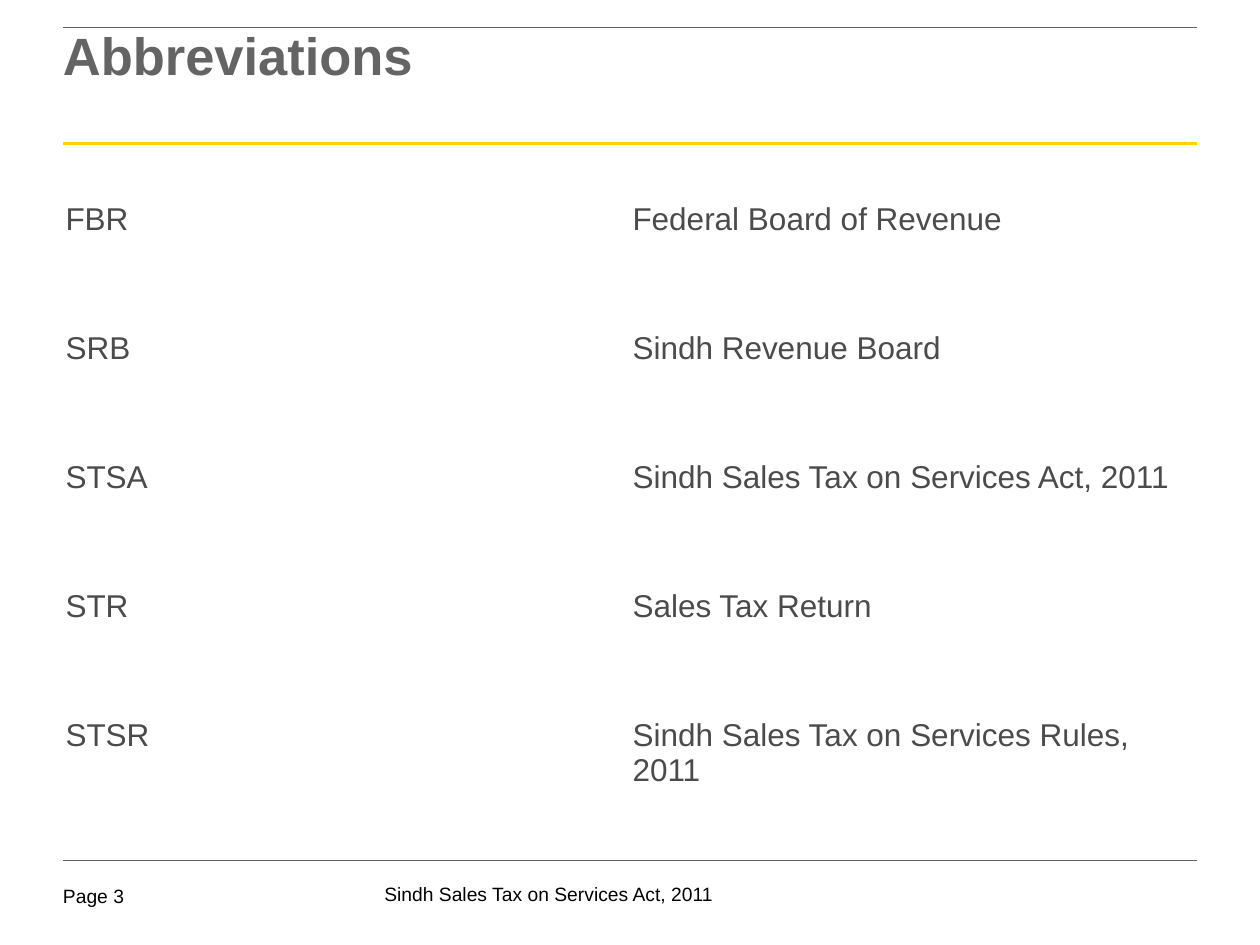
from lxml import etree
from pptx import Presentation
from pptx.dml.color import RGBColor
from pptx.enum.shapes import MSO_CONNECTOR
from pptx.oxml.ns import qn
from pptx.util import Inches, Pt

FONT = "Arial"
GREY, DARK, YELLOW, BLACK, WHITE = "646464", "4B4B4B", "FFD200", "000000", "FFFFFF"
LEFT, WIDTH = 0.5, 9

ABBREVIATIONS = [
    ("FBR", "Federal Board of Revenue"),
    ("SRB", "Sindh Revenue Board"),
    ("STSA", "Sindh Sales Tax on Services Act, 2011"),
    ("STR", "Sales Tax Return"),
    ("STSR", "Sindh Sales Tax on Services Rules, 2011"),
]


def rgb(value):
    return RGBColor.from_string(value)


def set_font(p, size, color, bold=False):
    p.font.name = FONT
    p.font.size = Pt(size)
    p.font.bold = bold
    p.font.color.rgb = rgb(color)


def add_text(slide, text, x, y, w, h, size, color, bold=False, top=0):
    tf = slide.shapes.add_textbox(Inches(x), Inches(y), Inches(w), Inches(h)).text_frame
    tf.word_wrap = True
    tf.margin_left = tf.margin_right = tf.margin_bottom = 0
    tf.margin_top = Inches(top)
    p = tf.paragraphs[0]
    p.text = text
    set_font(p, size, color, bold)
    return p


def add_rule(slide, x, y, w, color, weight):
    line = slide.shapes.add_connector(
        MSO_CONNECTOR.STRAIGHT, Inches(x), Inches(y), Inches(x + w), Inches(y))
    line.line.color.rgb = rgb(color)
    line.line.width = Pt(weight)
    etree.SubElement(line._element.spPr, qn("a:effectLst"))


def add_header(slide, x, y, w, h):
    add_rule(slide, x, y, w, GREY, 0.5)
    add_rule(slide, x, y + h - 0.02, w, YELLOW, 1.5)
    p = add_text(slide, "Abbreviations", x, y, w, h, 30, GREY, bold=True, top=0.04)
    p.line_spacing = 0.85


def add_abbreviations(slide, x, y, w, h):
    table = slide.shapes.add_table(
        len(ABBREVIATIONS), 2, Inches(x), Inches(y), Inches(w), Inches(h)).table
    for row, texts in zip(table.rows, ABBREVIATIONS):
        for cell, text in zip(row.cells, texts):
            cell.fill.solid()
            cell.fill.fore_color.rgb = rgb(WHITE)
            cell.text = text
            set_font(cell.text_frame.paragraphs[0], 18, DARK)


def add_footer(slide, x, y, w):
    add_rule(slide, x, y, w, GREY, 0.25)
    add_text(slide, "Page 3", x, y + 0.19, 0.73, 0.22, 11, BLACK)
    add_text(slide, "Sindh Sales Tax on Services Act, 2011",
             x + 2.55, y + 0.17, 2.95, 0.24, 11, BLACK)


def main():
    prs = Presentation()
    prs.slide_width, prs.slide_height = Inches(10), Inches(7.5)
    slide = prs.slides.add_slide(prs.slide_layouts[6])
    add_header(slide, LEFT, 0.22, WIDTH, 0.94)
    add_abbreviations(slide, 0.42, 1.55, WIDTH, 5.12)
    add_footer(slide, LEFT, 6.83, WIDTH)
    prs.save("out.pptx")


if __name__ == "__main__":
    main()
